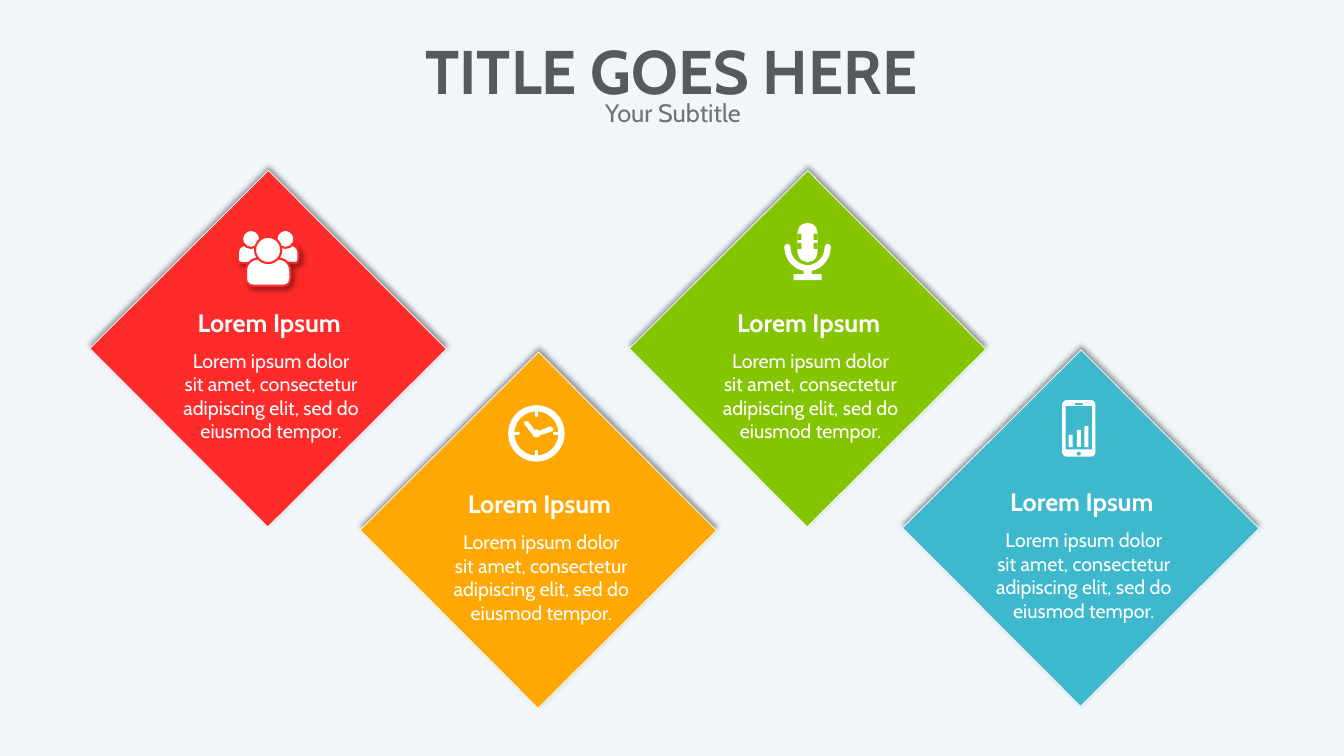
"""Build a slide with four coloured diamonds, each with an icon, a heading and a text."""
from lxml import etree
from pptx import Presentation
from pptx.dml.color import RGBColor
from pptx.enum.shapes import MSO_SHAPE as SHAPE
from pptx.enum.text import MSO_ANCHOR, MSO_AUTO_SIZE, PP_ALIGN
from pptx.oxml.ns import qn
from pptx.util import Inches, Pt

BACKDROP = RGBColor(0xF1, 0xF6, 0xFB)
TITLE = RGBColor(0x56, 0x59, 0x5E)
SUBTITLE = RGBColor(0x76, 0x71, 0x71)
WHITE = RGBColor(0xFF, 0xFF, 0xFF)
RED = RGBColor(0xFF, 0x2B, 0x2A)
ORANGE = RGBColor(0xFF, 0xA8, 0x03)
GREEN = RGBColor(0x85, 0xC4, 0x01)
TEAL = RGBColor(0x3E, 0xB8, 0xCD)
SIDE = 2.5
UNIT = Inches(0.01)
HEADING = "Lorem Ipsum"
BODY = "Lorem ipsum dolor sit amet, consectetur adipiscing elit, sed do eiusmod tempor."

# Icon parts: shape, centre offset x and y, width, height (hundredths of an inch), adjustments, cut-out
PEOPLE = [(SHAPE.ROUND_2_SAME_RECTANGLE, x, -4, 24, 18, (0.4, 0.2), False) for x in (-18, 18)]
PEOPLE += [(SHAPE.OVAL, x, -19, 18, 18, (), False) for x in (-17, 17)]
PEOPLE += [(SHAPE.ROUND_2_SAME_RECTANGLE, 0, 14, 44, 27, (0.45, 0.25), False),
           (SHAPE.OVAL, 0, -8, 26, 26, (), False)]
CLOCK = [(SHAPE.DONUT, 0, 0, 56, 56, (0.11,), False), (SHAPE.OVAL, 0, 0, 8, 8, (), False)]
CLOCK += [(SHAPE.ROUNDED_RECTANGLE, 0, y, 3, 11, (0.5,), False) for y in (-22, 22)]
CLOCK += [(SHAPE.ROUNDED_RECTANGLE, x, 0, 11, 3, (0.5,), False) for x in (-22, 22)]
HANDS = [[(0, -1), (-3, 2), (-12, -9), (-12, -12), (-8, -12)],
         [(3, 2), (1, -2), (14, -7), (17, -5), (16, -2)]]
MICROPHONE = [(SHAPE.BLOCK_ARC, 0, -5, 46, 48, (0, 108, 0.13), False),
              (SHAPE.ROUNDED_RECTANGLE, 0, -9.5, 20, 39, (0.5,), False),
              (SHAPE.RECTANGLE, 0, 20, 8, 7, (), False),
              (SHAPE.RECTANGLE, 0, 25, 28, 6, (), False)]
MICROPHONE += [(SHAPE.OVAL, x, -5, 6, 6, (), False) for x in (-20, 20)]
MICROPHONE += [(SHAPE.RECTANGLE, x, y, 4, 6, (), True) for x in (-8, 8) for y in (-15, -6)]
PHONE = [(SHAPE.ROUNDED_RECTANGLE, 0, 0, 33, 56, (0.13,), False),
         (SHAPE.RECTANGLE, 0, -0.5, 26, 43, (), True),
         (SHAPE.ROUNDED_RECTANGLE, 0, -24, 8, 2, (0.5,), True),
         (SHAPE.OVAL, 0, 25, 4, 4, (), True)]
PHONE += [(SHAPE.RECTANGLE, x, 18.5 - h / 2, 4, h, (), False)
          for x, h in ((-8, 12), (0, 17), (7.5, 21))]

DIAMONDS = [(1.41, 2.21, RED, PEOPLE, 2.66, 2.56, []),
            (4.09, 4.01, ORANGE, CLOCK, 5.32, 4.3, HANDS),
            (6.76, 2.21, GREEN, MICROPHONE, 8.01, 2.5, []),
            (9.47, 3.99, TEAL, PHONE, 10.7, 4.25, [])]


def write(tf, text, size, color, bold=False):
    for name, value in {"word_wrap": True, "auto_size": MSO_AUTO_SIZE.NONE,
                        "vertical_anchor": MSO_ANCHOR.TOP}.items():
        setattr(tf, name, value)
    p = tf.paragraphs[0]
    p.alignment, p.space_before = PP_ALIGN.CENTER, Pt(0)
    r = p.add_run()
    r.text = text
    for name, value in {"name": "Cabin", "size": Pt(size), "bold": bold}.items():
        setattr(r.font, name, value)
    r.font.color.rgb = color


def paint(sp, fill, line=None, width=0.5, shadow=None):
    sp.shadow.inherit = False
    sp.fill.solid()
    sp.fill.fore_color.rgb = fill
    if line is None:
        sp.line.fill.background()
    else:
        sp.line.color.rgb, sp.line.width = line, Pt(width)
    if shadow is not None:
        effects = sp._element.spPr.find(qn("a:effectLst"))
        outer = etree.SubElement(effects, qn("a:outerShdw"), blurRad=str(Pt(4)), dist=str(Pt(3)),
                                 dir=str(shadow * 60000), algn="ctr", rotWithShape="0")
        black = etree.SubElement(outer, qn("a:srgbClr"), val="000000")
        etree.SubElement(black, qn("a:alpha"), val="40000")


prs = Presentation()
prs.slide_width, prs.slide_height = Inches(13.33), Inches(7.5)
s = prs.slides.add_slide(prs.slide_layouts[0])
s.background.fill.solid()
s.background.fill.fore_color.rgb = BACKDROP

for sp, box, text, size, color, bold in [
        (s.shapes.title, (3.65, 0.28, 6.02, 0.84), "TITLE GOES HERE", 44, TITLE, True),
        (s.placeholders[1], (4.41, 0.92, 4.53, 0.4), "Your Subtitle", 18, SUBTITLE, False)]:
    sp.left, sp.top, sp.width, sp.height = map(Inches, box)
    write(sp.text_frame, text, size, color, bold)

for left, top, color, icon, icon_x, icon_y, hands in DIAMONDS:
    diamond = s.shapes.add_shape(SHAPE.RECTANGLE, *map(Inches, (left, top, SIDE, SIDE)))
    diamond.rotation = 315.1
    paint(diamond, color, WHITE, shadow=270)

    for dx, dy, w, h, text, size, bold in [(0.26, 0.79, 2, 0.4, HEADING, 18, True),
                                           (0.3, 1.2, 1.96, 1.04, BODY, 14, False)]:
        box = s.shapes.add_textbox(*map(Inches, (left + dx, top + dy, w, h)))
        write(box.text_frame, text, size, WHITE, bold)

    x0, y0 = Inches(icon_x), Inches(icon_y)
    for kind, dx, dy, w, h, adjustments, cut in icon:
        part = s.shapes.add_shape(kind, x0 + int((dx - w / 2) * UNIT), y0 + int((dy - h / 2) * UNIT),
                                  int(w * UNIT), int(h * UNIT))
        for i, value in enumerate(adjustments):
            part.adjustments[i] = value
        if icon is PEOPLE:
            paint(part, WHITE, color, 1.5, 45 if kind != SHAPE.OVAL else None)
        else:
            paint(part, color if cut else WHITE)
    for points in hands:
        builder = s.shapes.build_freeform(*points[0], scale=UNIT)
        builder.add_line_segments(points[1:])
        paint(builder.convert_to_shape(x0, y0), WHITE)

prs.save("out.pptx")
